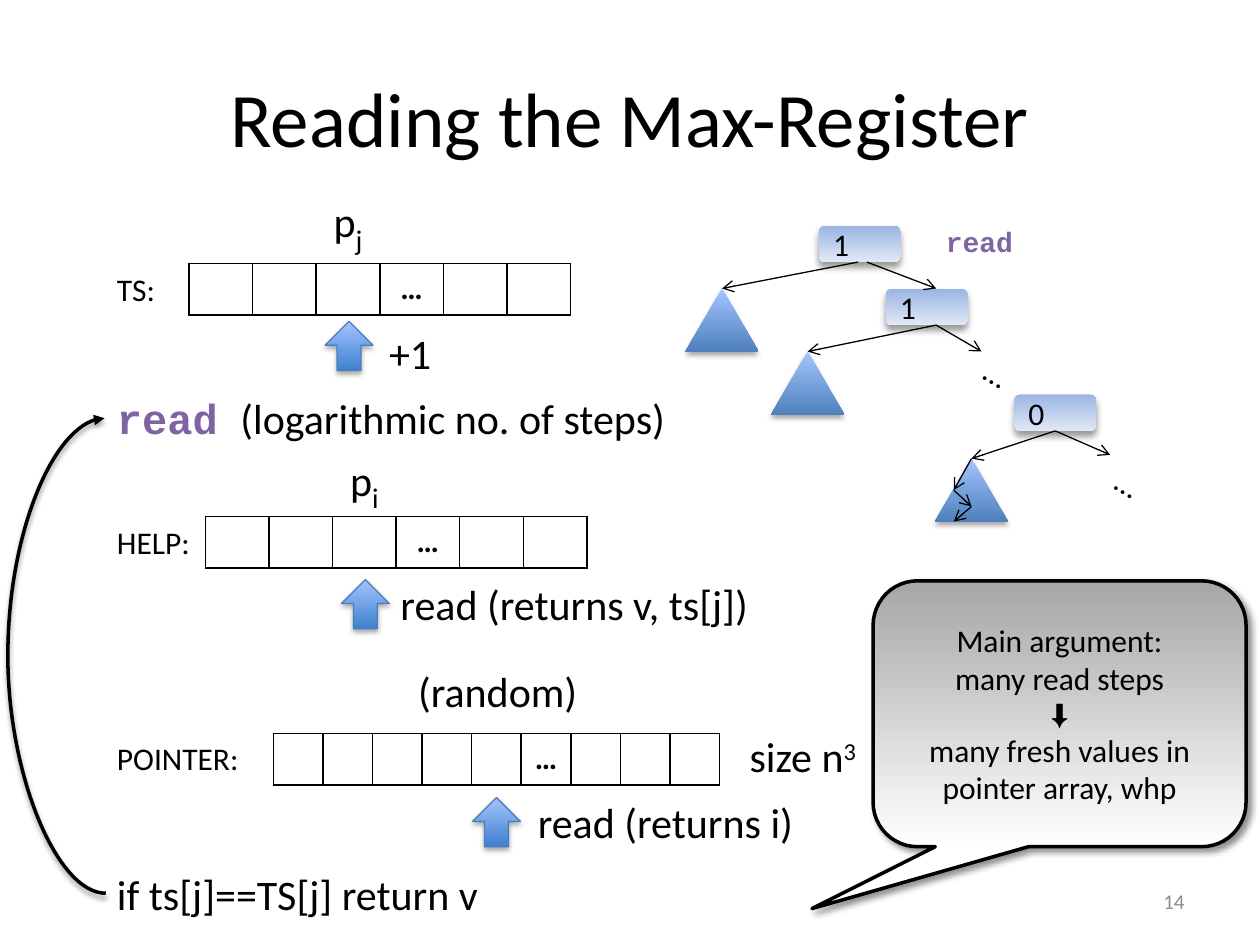
from typing import NamedTuple, Optional

import pptx
import pptx.dml.color
import pptx.enum.shapes
import pptx.enum.text
import pptx.oxml
import pptx.oxml.ns
import pptx.util

Inches, Pt = pptx.util.Inches, pptx.util.Pt
RGBColor = pptx.dml.color.RGBColor
MSO_SHAPE = pptx.enum.shapes.MSO_SHAPE
MSO_CONNECTOR = pptx.enum.shapes.MSO_CONNECTOR
MSO_ANCHOR = pptx.enum.text.MSO_ANCHOR
PP_ALIGN = pptx.enum.text.PP_ALIGN
qn = pptx.oxml.ns.qn

BLACK = RGBColor(0x00, 0x00, 0x00)
WHITE = RGBColor(0xFF, 0xFF, 0xFF)
GREY = RGBColor(0x8C, 0x8C, 0x8C)
SILVER = RGBColor(0xA6, 0xA6, 0xA6)
PURPLE = RGBColor(0x80, 0x64, 0xA2)
NODE_TOP = RGBColor(0x9A, 0xB5, 0xE4)
NODE_BOTTOM = RGBColor(0xE1, 0xE8, 0xF5)
LIGHT_BLUE = RGBColor(0xA4, 0xC4, 0xFF)
TREE_BLUE = RGBColor(0x4F, 0x81, 0xBD)
ARROW_BLUE = RGBColor(0x3F, 0x80, 0xCE)
ARROW_EDGE = RGBColor(0x4B, 0x7E, 0xBC)


class Label(NamedTuple):
    text: str
    x: float
    y: float
    w: float
    h: float = 0.5
    size: float = 24
    color: RGBColor = BLACK
    font: str = "Calibri"
    bold: bool = False
    rotation: float = 0
    script: str = ""
    script_size: float = 24
    baseline: int = 0


class Register(NamedTuple):
    x: float
    y: float
    w: float
    cells: int
    dots: int


class Shadow(NamedTuple):
    alpha: int
    blur: float
    dist: float
    angle: int = 90


SOFT = Shadow(35, 3.1, 1.8)
NODE_SHADOW = Shadow(40, 4, 3)

LABELS = [
    Label("TS:", 0.83, 2.09, 0.51, 0.4, 18),
    Label("HELP:", 0.83, 4.1, 0.79, 0.4, 18),
    Label("POINTER:", 0.83, 5.82, 1.18, 0.4, 18),
    Label("read", 0.83, 3.07, 1.01, color=PURPLE, font="Courier New", bold=True),
    Label("read", 7.41, 1.73, 0.74, 0.37, 16, PURPLE, "Courier New", True),
    Label("p", 2.55, 1.45, 0.44, 0.57, script="j", script_size=28, baseline=-25),
    Label("p", 2.68, 3.5, 0.44, script="i", script_size=28, baseline=-25),
    Label("+1", 2.99, 2.55, 0.54),
    Label("(logarithmic no. of steps)", 1.81, 3.07, 3.62),
    Label("read (returns v, ts[j])", 3.08, 4.54, 3.02),
    Label("(random)", 3.22, 5.23, 1.48),
    Label("size n", 5.85, 5.75, 1.08, script="3", baseline=30),
    Label("read (returns i)", 4.17, 6.27, 2.26),
    Label("if ts[j]==TS[j] return v", 0.83, 6.84, 3.11),
    Label("…", 7.73, 2.76, 0.37, 0.4, 18, rotation=31.1),
    Label("…", 8.77, 3.64, 0.37, 0.4, 18, rotation=31.1),
]
REGISTERS = [
    Register(1.5, 2.09, 3.03, 6, 3),
    Register(1.63, 4.1, 3.03, 6, 3),
    Register(2.17, 5.82, 3.54, 9, 5),
]
UP_ARROWS = [(2.58, 2.55), (2.71, 4.6), (3.75, 6.33)]
NODES = [("1", 6.5, 1.79), ("1", 7.03, 2.29), ("0", 8.05, 3.13)]
SUBTREES = [(5.44, 2.29), (6.12, 2.79), (7.42, 3.64)]
LEFT_STARTS = [(6.81, 2.08), (7.43, 2.58), (8.37, 3.42)]
RIGHT_EDGES = [((6.88, 2.08), (7.43, 2.29)), ((7.43, 2.58), (7.79, 2.79)),
               ((8.37, 3.42), (8.81, 3.61))]
SEARCH_STEPS = [(7.71, 3.64), (7.57, 3.89), (7.71, 4.02), (7.57, 4.14)]


def format_run(r, size: float, color: RGBColor = BLACK, font: str = "Calibri",
               bold: bool = False) -> None:
    r.font.size, r.font.name, r.font.bold = Pt(size), font, bold
    r.font.color.rgb = color


def add_shadow(sp_pr, shadow: Optional[Shadow]) -> None:
    """Append an effect list, left empty when there is no shadow."""
    effects = pptx.oxml.parse_xml(f"<a:effectLst {pptx.oxml.ns.nsdecls('a')}/>")
    sp_pr.append(effects)
    if shadow:
        outer = effects.makeelement(qn("a:outerShdw"), {
            "blurRad": str(Pt(shadow.blur)), "dist": str(Pt(shadow.dist)),
            "dir": str(shadow.angle * 60000), "rotWithShape": "0"})
        effects.append(outer)
        color = outer.makeelement(qn("a:srgbClr"), {"val": str(BLACK)})
        outer.append(color)
        color.append(color.makeelement(qn("a:alpha"), {"val": str(shadow.alpha * 1000)}))


def add_gradient_shape(slide, kind, x: float, y: float, w: float, h: float,
                       top: RGBColor, bottom: RGBColor, shadow: Shadow,
                       edge: Optional[RGBColor] = None, width: float = 0.75):
    sp = slide.shapes.add_shape(kind, Inches(x), Inches(y), Inches(w), Inches(h))
    sp.fill.gradient()
    sp.fill.gradient_angle = 270
    for stop, color in zip(sp.fill.gradient_stops, (top, bottom)):
        stop.color.rgb = color
    if edge is None:
        sp.line.fill.background()
    else:
        sp.line.color.rgb, sp.line.width = edge, Pt(width)
    add_shadow(sp._element.spPr, shadow)
    return sp


def add_arrow(slide, start, end, kind=MSO_CONNECTOR.STRAIGHT, width: float = 0.75,
              head: str = "arrow", shadow: Optional[Shadow] = None):
    cxn = slide.shapes.add_connector(kind, *map(Inches, (*start, *end)))
    cxn.line.color.rgb, cxn.line.width = BLACK, Pt(width)
    ln = cxn.line._get_or_add_ln()
    ln.append(ln.makeelement(qn("a:tailEnd"), {"type": head}))
    add_shadow(cxn._element.spPr, shadow)
    return cxn


def add_label(slide, label: Label) -> None:
    sp = slide.shapes.add_textbox(*map(Inches, (label.x, label.y, label.w, label.h)))
    sp.rotation = label.rotation
    tf = sp.text_frame
    tf.word_wrap = False
    tf.text = label.text
    p = tf.paragraphs[0]
    format_run(p.runs[0], label.size, label.color, label.font, label.bold)
    if label.script:
        r = p.add_run()
        r.text = label.script
        format_run(r, label.script_size)
        r._r.get_or_add_rPr().set("baseline", str(label.baseline * 1000))


def add_register(slide, reg: Register) -> None:
    table = slide.shapes.add_table(
        1, reg.cells, *map(Inches, (reg.x, reg.y, reg.w, 0.41))).table
    table.first_row = table.horz_banding = False
    for i, column in enumerate(table.columns):
        column.width = Inches(reg.w / reg.cells)
        cell = table.cell(0, i)
        tc_pr = cell._tc.get_or_add_tcPr()
        for side in ("lnL", "lnR", "lnT", "lnB"):
            tc_pr.append(pptx.oxml.parse_xml(
                f'<a:{side} {pptx.oxml.ns.nsdecls("a")} w="{Pt(1)}"><a:solidFill>'
                f'<a:srgbClr val="{BLACK}"/></a:solidFill></a:{side}>'))
        cell.fill.background()
        if i == reg.dots:
            cell.text = "…"
            p = cell.text_frame.paragraphs[0]
            p.alignment = PP_ALIGN.CENTER
            format_run(p.runs[0], 18, bold=True)


def add_tree(slide) -> None:
    triangles = [add_gradient_shape(slide, MSO_SHAPE.ISOSCELES_TRIANGLE, x, y, 0.58, 0.5,
                                    LIGHT_BLUE, TREE_BLUE, SOFT) for x, y in SUBTREES]
    nodes = []
    for text, x, y in NODES:
        sp = add_gradient_shape(slide, MSO_SHAPE.ROUNDED_RECTANGLE, x, y, 0.65, 0.29,
                                NODE_TOP, NODE_BOTTOM, NODE_SHADOW)
        tf = sp.text_frame
        tf.margin_top = tf.margin_bottom = 0
        tf.text = text
        format_run(tf.paragraphs[0].runs[0], 18)
        nodes.append(sp)
    left = [add_arrow(slide, start, start) for start in LEFT_STARTS]
    for cxn, triangle in zip(left, triangles):
        cxn.end_connect(triangle, 0)
    right = [add_arrow(slide, start, end) for start, end in RIGHT_EDGES]
    for cxn in (left[-1], right[-1]):
        cxn.begin_connect(nodes[-1], 2)
    for start, end in zip(SEARCH_STEPS, SEARCH_STEPS[1:]):
        add_arrow(slide, start, end)


def add_callout(slide) -> None:
    sp = add_gradient_shape(slide, MSO_SHAPE.ROUNDED_RECTANGULAR_CALLOUT, 6.93, 4.61,
                            2.96, 2.11, SILVER, WHITE, Shadow(43, 4, 3, 45), BLACK, 2)
    for i, value in enumerate((-0.664, 0.733, 0.167)):
        sp.adjustments[i] = value
    tf = sp.text_frame
    tf.text = "Main argument:\nmany read steps\v⬇\vmany fresh values in pointer array, whp"
    for p in tf.paragraphs:
        p.alignment = PP_ALIGN.CENTER
        for r in p.runs:
            format_run(r, 18)
    format_run(tf.paragraphs[1].runs[1], 16, font="Arial")


def main() -> None:
    prs = pptx.Presentation()
    prs.slide_width, prs.slide_height = Inches(10), Inches(7.5)
    slide = prs.slides.add_slide(prs.slide_layouts[5])
    title = slide.shapes.title
    title.left, title.top, title.width, title.height = map(Inches, (0.5, 0.3, 9, 1.25))
    title.text_frame.text = "Reading the Max-Register"
    format_run(title.text_frame.paragraphs[0].runs[0], 44)

    add_tree(slide)
    for reg in REGISTERS:
        add_register(slide, reg)
    for x, y in UP_ARROWS:
        add_gradient_shape(slide, MSO_SHAPE.UP_ARROW, x, y, 0.38, 0.39,
                           LIGHT_BLUE, ARROW_BLUE, SOFT, ARROW_EDGE)
    for label in LABELS:
        add_label(slide, label)
    loop = add_arrow(slide, (0.84, 7.09), (0.83, 3.32), MSO_CONNECTOR.CURVE, 2,
                     "triangle", Shadow(38, 3.1, 1.6))
    guides = loop._element.spPr.prstGeom.get_or_add_avLst()
    guides.append(guides.makeelement(qn("a:gd"), {"name": "adj1", "fmla": "val 7900000"}))
    add_callout(slide)

    number = slide.shapes.add_textbox(*map(Inches, (7.17, 6.95, 2.33, 0.4)))
    tf = number.text_frame
    tf.word_wrap, tf.vertical_anchor = True, MSO_ANCHOR.MIDDLE
    tf.text = "14"
    tf.paragraphs[0].alignment = PP_ALIGN.RIGHT
    format_run(tf.paragraphs[0].runs[0], 12, GREY)
    prs.save("out.pptx")


if __name__ == "__main__":
    main()
